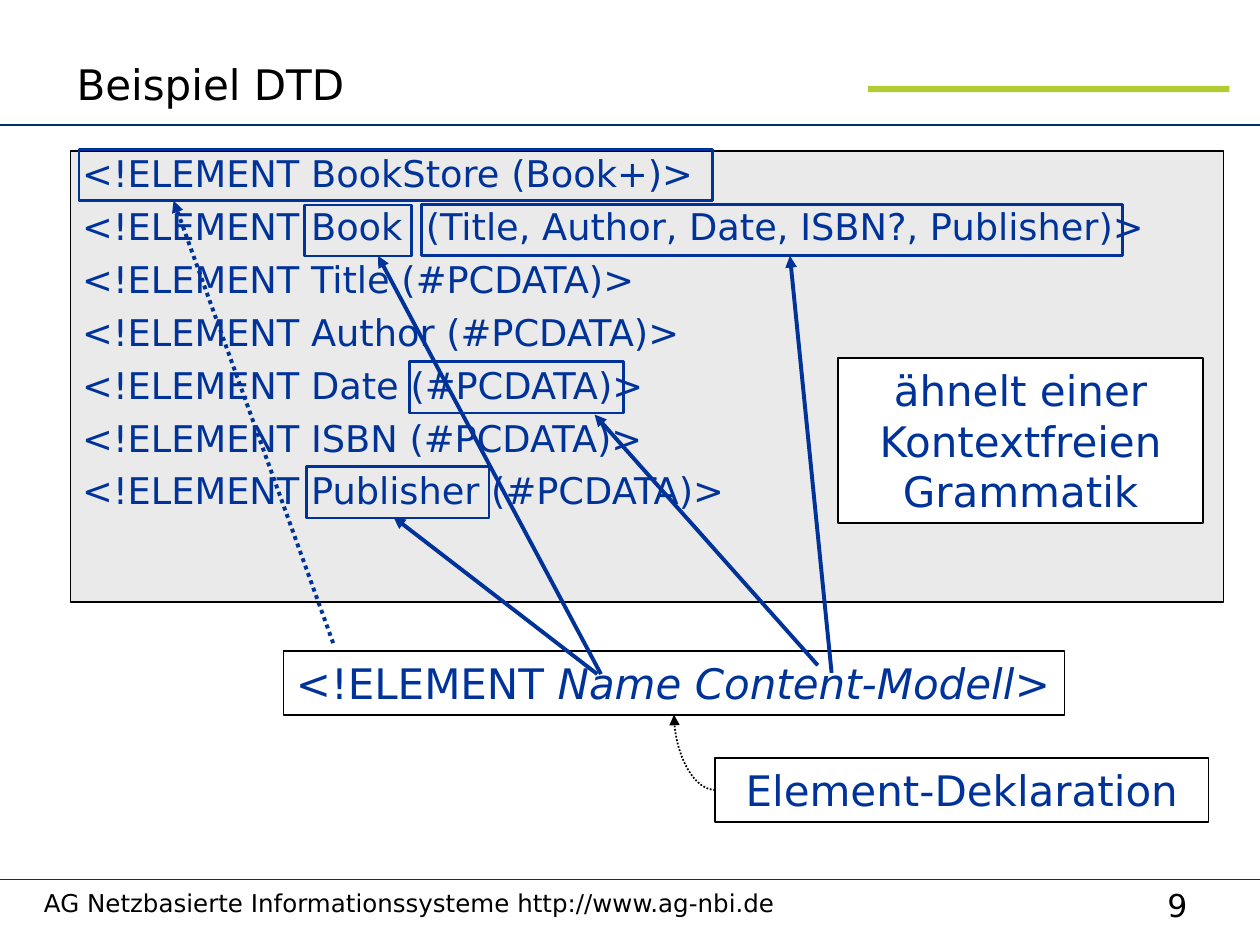
from lxml import etree
from pptx import Presentation
from pptx.dml.color import RGBColor
from pptx.enum import dml, shapes, text
from pptx.oxml.ns import qn
from pptx.util import Pt

BLUE, NAVY, BLACK, WHITE = "003399", "003366", "000000", "FFFFFF"
LEFT, CENTER = text.PP_ALIGN.LEFT, text.PP_ALIGN.CENTER
TOP, MIDDLE, BOTTOM = text.MSO_ANCHOR.TOP, text.MSO_ANCHOR.MIDDLE, text.MSO_ANCHOR.BOTTOM

presentation = Presentation()
presentation.slide_width, presentation.slide_height = Pt(720), Pt(540)
slide = presentation.slides.add_slide(presentation.slide_layouts[6])


def add_box(frame, fill=None, line=None, width=1, paragraphs=(), size=24,
            color=BLUE, align=CENTER, anchor=MIDDLE, wrap=True):
    """Add a rectangle; each paragraph is a list of (text, italic) runs."""
    shape = slide.shapes.add_shape(shapes.MSO_SHAPE.RECTANGLE, *map(Pt, frame))
    shape.shadow.inherit = False
    if fill:
        shape.fill.solid()
        shape.fill.fore_color.rgb = RGBColor.from_string(fill)
    else:
        shape.fill.background()
    if line:
        shape.line.color.rgb = RGBColor.from_string(line)
        shape.line.width = Pt(width)
    else:
        shape.line.fill.background()
    text_frame = shape.text_frame
    text_frame.word_wrap = wrap
    text_frame.vertical_anchor = anchor
    for index, runs in enumerate(paragraphs):
        paragraph = text_frame.add_paragraph() if index else text_frame.paragraphs[0]
        paragraph.alignment = align
        paragraph.space_before = Pt(5 if index else 0)
        for content, italic in runs:
            run = paragraph.add_run()
            run.text = content
            run.font.name = "DejaVu Sans"
            run.font.size = Pt(size)
            run.font.italic = italic
            run.font.color.rgb = RGBColor.from_string(color)
    return shape


def add_line(start, end, color=BLUE, width=2.25, dotted=False, arrow=True,
             kind=shapes.MSO_CONNECTOR.STRAIGHT):
    connector = slide.shapes.add_connector(kind, *map(Pt, start + end))
    connector.line.color.rgb = RGBColor.from_string(color)
    connector.line.width = Pt(width)
    if dotted:
        connector.line.dash_style = dml.MSO_LINE.ROUND_DOT
    if arrow:
        etree.SubElement(connector.line._get_or_add_ln(), qn("a:tailEnd"), type="triangle")
    etree.SubElement(connector._element.spPr, qn("a:effectLst"))
    return connector


# Page frame
add_box((496, 49, 206.6, 3.6), fill="B2CC33")
for y in (71.3, 502.6):
    add_line((0, y), (720, y), NAVY, 1, arrow=False)
add_box((643.7, 502.6, 58.3, 28.8), paragraphs=[[("9", False)]], size=18, color=BLACK)
add_box((36.7, 0, 578.2, 65.5), paragraphs=[[("Beispiel DTD", False)]],
        color=BLACK, align=LEFT, anchor=BOTTOM)
add_box((18, 504, 625.7, 23.8), size=14, color=BLACK, align=LEFT, anchor=TOP,
        paragraphs=[[("AG Netzbasierte Informationssysteme http://www.ag-nbi.de", False)]])

# DTD listing
declarations = [
    "BookStore (Book+)",
    "Book  (Title, Author, Date, ISBN?, Publisher)",
    "Title (#PCDATA)",
    "Author (#PCDATA)",
    "Date (#PCDATA)",
    "ISBN (#PCDATA)",
    "Publisher (#PCDATA)",
]
listing = add_box((40.3, 86.4, 658.8, 257.8), "EAEAEA", BLACK, size=21, align=LEFT, anchor=TOP,
                  paragraphs=[[(f"<!ELEMENT {declaration}>", False)] for declaration in declarations])
listing.text_frame.margin_left = Pt(6.7)
listing.text_frame.margin_top = listing.text_frame.margin_right = 0

# Notes around the listing
add_box((478.8, 204.5, 208.8, 94.3), WHITE, BLACK,
        paragraphs=[[("ähnelt einer Kontextfreien Grammatik", False)]])
pattern = add_box((162, 371.8, 446.4, 36.7), None, BLACK, align=LEFT, wrap=False,
                  paragraphs=[[("<!ELEMENT ", False), ("Name Content-Modell", True), (">", False)]])
caption = add_box((408.6, 433, 282, 36.7), WHITE, BLACK,
                  paragraphs=[[("Element-Deklaration", False)]])
curve = add_line((408.6, 451.4), (385.2, 408.5), BLACK, 1, dotted=True,
                 kind=shapes.MSO_CONNECTOR.CURVE)
curve.begin_connect(caption, 1)
curve.end_connect(pattern, 2)
curve._element.spPr.find(qn("a:prstGeom")).set("prst", "curvedConnector2")

# Highlighted parts of the listing
highlights = [
    (45.2, 85.5, 361.8, 29),     # whole declaration
    (174, 117.2, 61.2, 29),      # Book
    (175, 266.6, 104.4, 29.4),   # Publisher
    (241, 116.8, 400.6, 29.4),   # content model of Book
    (234, 206.6, 122.4, 29.4),   # content model of Date
]
for frame in highlights:
    add_box(frame, line=BLUE, width=1.5)

# Arrows from the pattern to the highlights
arrows = [
    ((475.2, 384.5), (451.4, 146.2)),
    ((341.3, 385.2), (224.9, 295.5)),
    ((343.4, 385.2), (216, 146.2)),
    ((467.3, 380.2), (339.8, 236.9)),
]
for start, end in arrows:
    add_line(start, end)
add_line((190.4, 367.5), (99.2, 114.7), dotted=True)

presentation.save("out.pptx")
